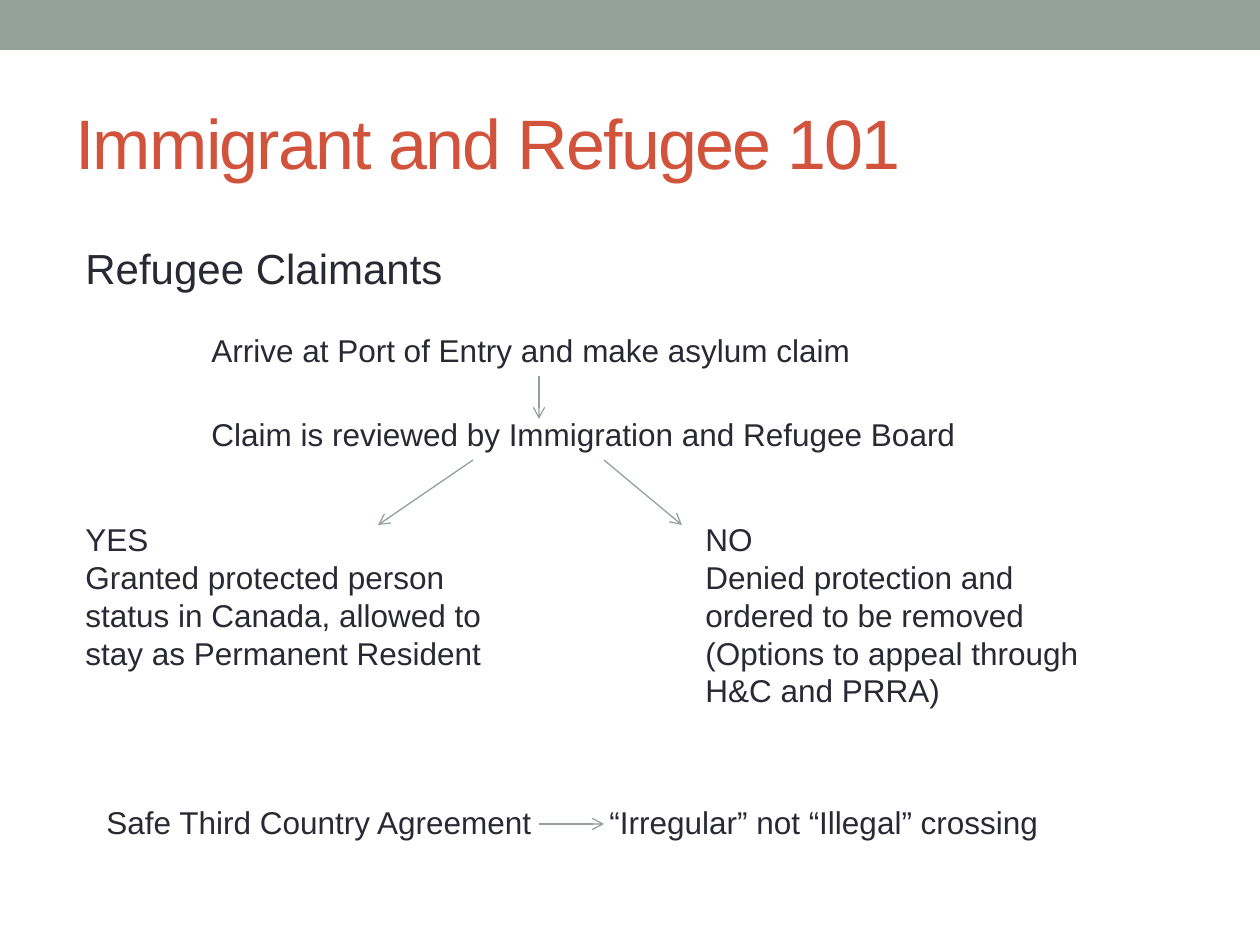
import pptx
import pptx.dml.color
import pptx.enum.shapes
import pptx.enum.text
import pptx.oxml.ns
import pptx.util
import lxml.etree

PX = 914400 / 126
INK, ACCENT, SAGE = "292934", "D2533C", "93A299"
ANCHOR = pptx.enum.text.MSO_ANCHOR


def px(*values):
    return [pptx.util.Emu(round(v * PX)) for v in values]


def rgb(value):
    return pptx.dml.color.RGBColor.from_string(value)


qn = pptx.oxml.ns.qn
prs = pptx.Presentation()
prs.slide_width, prs.slide_height = px(1260, 945)
s = prs.slides.add_slide(prs.slide_layouts[6])

sp = s.shapes.add_shape(pptx.enum.shapes.MSO_SHAPE.RECTANGLE, *px(0, 0, 1260, 50))
sp.shadow.inherit = False
sp.fill.solid()
sp.fill.fore_color.rgb = rgb(SAGE)
sp.line.fill.background()

texts = [
    ((63, 73, 1134, 136), 40, ACCENT, ANCHOR.MIDDLE, ["Immigrant and Refugee 101"]),
    ((73, 236, 892, 63), 24, INK, ANCHOR.TOP, ["Refugee Claimants"]),
    ((199, 325, 679, 50), 18, INK, ANCHOR.TOP,
     ["Arrive at Port of Entry and make asylum claim"]),
    ((199, 409, 809, 50), 18, INK, ANCHOR.TOP,
     ["Claim is reviewed by Immigration and Refugee Board"]),
    ((73, 514, 431, 165), 18, INK, ANCHOR.TOP,
     ["YES", "Granted protected person status in Canada, allowed to stay as Permanent Resident"]),
    ((693, 514, 427, 204), 18, INK, ANCHOR.TOP,
     ["NO", "Denied protection and ordered to be removed (Options to appeal through H&C and PRRA)"]),
    ((94, 797, 1040, 50), 18, INK, ANCHOR.TOP,
     ["Safe Third Country Agreement\t“Irregular” not “Illegal” crossing"]),
]
for box, size, color, anchor, lines in texts:
    sp = s.shapes.add_textbox(*px(*box))
    tf = sp.text_frame
    for name, value in {"word_wrap": True, "vertical_anchor": anchor}.items():
        setattr(tf, name, value)
    for i, line in enumerate(lines):
        p = tf.add_paragraph() if i else tf.paragraphs[0]
        r = p.add_run()
        r.text = line
        font = {"name": "Arial", "size": pptx.util.Pt(size)}
        for name, value in font.items():
            setattr(r.font, name, value)
        r.font.color.rgb = rgb(color)
        if color == ACCENT:
            r.font._element.set("spc", "-100")
        if "\t" in line:
            tabs = lxml.etree.SubElement(p._p.get_or_add_pPr(), qn("a:tabLst"))
            lxml.etree.SubElement(tabs, qn("a:tab"), pos=str(px(503)[0]), algn="l")

arrows = [
    (539, 376, 539, 419),
    (473, 460, 378, 525),
    (604, 460, 682, 525),
    (539, 824, 604, 824),
]
for ends in arrows:
    sp = s.shapes.add_connector(pptx.enum.shapes.MSO_CONNECTOR.STRAIGHT, *px(*ends))
    sp.line.color.rgb = rgb(SAGE)
    sp.line.width = pptx.util.Pt(0.75)
    lxml.etree.SubElement(sp.line._get_or_add_ln(), qn("a:tailEnd"), type="arrow")
    lxml.etree.SubElement(sp._element.spPr, qn("a:effectLst"))

prs.save("out.pptx")
